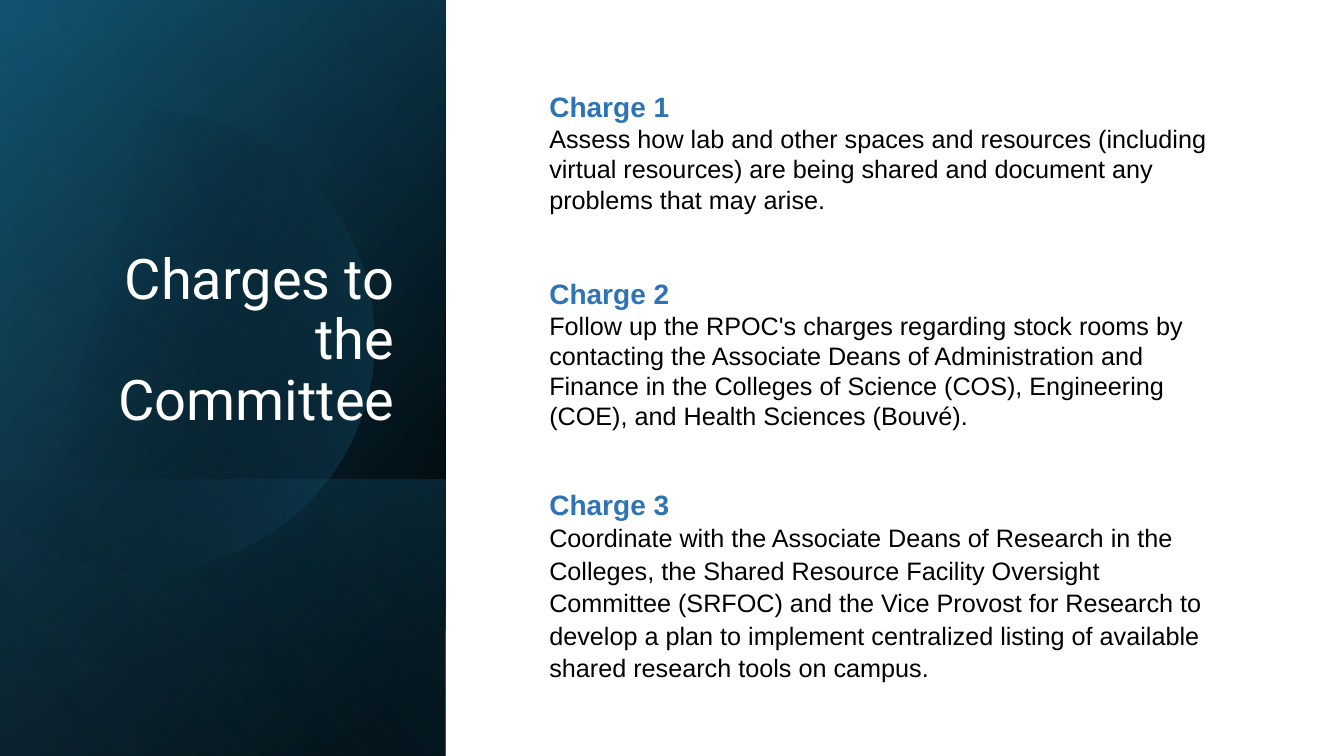
import math
from lxml import etree
from pptx import Presentation
from pptx.dml.color import RGBColor
from pptx.enum.shapes import MSO_SHAPE
from pptx.enum.text import MSO_ANCHOR, PP_ALIGN
from pptx.oxml.ns import qn
from pptx.util import Inches, Pt

RECTANGLE = MSO_SHAPE.RECTANGLE
BOTTOM = MSO_ANCHOR.BOTTOM
LEFT, RIGHT = PP_ALIGN.LEFT, PP_ALIGN.RIGHT

TITLE = "Charges to the Committee"
CHARGES = [
    ("Charge 1",
     "Assess how lab and other spaces and resources (including virtual resources) "
     "are being shared and document any problems that may arise.",
     0.82, 1.67, 1, 0),
    ("Charge 2",
     "Follow up the RPOC's charges regarding stock rooms by contacting the Associate "
     "Deans of Administration and Finance in the Colleges of Science (COS), "
     "Engineering (COE), and Health Sciences (Bouvé).",
     2.67, 1.67, 1, 0),
    ("Charge 3",
     "Coordinate with the Associate Deans of Research in the Colleges, the Shared "
     "Resource Facility Oversight Committee (SRFOC) and the Vice Provost for Research "
     "to develop a plan to implement centralized listing of available shared research "
     "tools on campus.",
     4.76, 2.07, 1.07, 8),
]

SLIDE_W, SLIDE_H = 13.33, 7.5
PANEL_W = 4.42
LOWER_TOP = 4.76
CHARGE_LEFT, CHARGE_W = 5.35, 6.74
DISC_X, DISC_Y, DISC_R = 1.43, 3.38, 2.28
ARC_STEPS = 90

BASE_BANDS = [
    (0, 50, [(8, "000000", 100), (100, "104862", 100)]),
    (0, 30, [(0, "000000", 0), (99, "156082", 46)]),
    (LOWER_TOP, 130, [(2, "156082", 29), (100, "000000", 30)]),
]
DISC_STOPS = [(29, "000000", 0), (100, "156082", 43)]
GLOSS_BAND = (0, 120, [(0, "000000", 0), (99, "46B1E1", 11)])

prs = Presentation()
prs.slide_width, prs.slide_height = Inches(SLIDE_W), Inches(SLIDE_H)
slide = prs.slides.add_slide(prs.slide_layouts[6])
shapes = slide.shapes


def color(value):
    return RGBColor.from_string(value)


def plain(shape):
    shape.shadow.inherit = False
    shape.line.fill.background()


def shade(shape, angle, stops):
    plain(shape)
    shape.fill.gradient()
    shape.fill.gradient_angle = 360 - angle
    for stop, (position, value, _) in zip(shape.fill.gradient_stops, stops):
        stop.position = position / 100
        stop.color.rgb = color(value)
    tints = shape.element.spPr.iter(qn("a:srgbClr"))
    for tint, (_, _, opacity) in zip(list(tints), stops):
        if opacity < 100:
            etree.SubElement(tint, qn("a:alpha")).set("val", str(opacity * 1000))


def add_band(top, angle, stops):
    length = SLIDE_H - top
    overhang = (length - PANEL_W) / 2
    band = shapes.add_shape(RECTANGLE, Inches(-overhang), Inches(top + overhang),
                            Inches(length), Inches(PANEL_W))
    band.rotation = 90
    band.element.spPr.find(qn("a:xfrm")).set("flipH", "1")
    shade(band, angle, stops)


def add_disc():
    half_arc = math.acos(-DISC_X / DISC_R)
    angles = [half_arc * (2 * i / ARC_STEPS - 1) for i in range(ARC_STEPS + 1)]
    points = [(Inches(DISC_X + DISC_R * math.cos(a)),
               Inches(DISC_Y + DISC_R * math.sin(a))) for a in angles]
    outline = shapes.build_freeform(*points[0])
    outline.add_line_segments(points[1:], close=True)
    shade(outline.convert_to_shape(), 14, DISC_STOPS)


def add_frame(left, top, width, height):
    box = shapes.add_textbox(Inches(left), Inches(top), Inches(width), Inches(height))
    box.text_frame.word_wrap = True
    return box.text_frame


def write(paragraph, text, font, size, value, bold=False, align=LEFT,
          spacing=1, before=0, after=0):
    paragraph.alignment = align
    paragraph.line_spacing = spacing
    paragraph.space_before, paragraph.space_after = Pt(before), Pt(after)
    run = paragraph.add_run()
    run.text = text
    run.font.name, run.font.size, run.font.bold = font, Pt(size), bold
    run.font.color.rgb = color(value)


page = shapes.add_shape(RECTANGLE, 0, 0, prs.slide_width, prs.slide_height)
plain(page)
page.fill.solid()
page.fill.fore_color.rgb = color("FFFFFF")

for base_band in BASE_BANDS:
    add_band(*base_band)
add_disc()
add_band(*GLOSS_BAND)

title_frame = add_frame(0.51, 0.64, 3.5, 3.7)
title_frame.vertical_anchor = BOTTOM
write(title_frame.paragraphs[0], TITLE, "Roboto", 40, "FFFFFF", align=RIGHT, spacing=0.9)

for heading, duty, top, height, spacing, after in CHARGES:
    charge_frame = add_frame(CHARGE_LEFT, top, CHARGE_W, height)
    write(charge_frame.paragraphs[0], heading, "Arial", 20, "2E74B5",
          bold=True, spacing=1.07, before=12)
    write(charge_frame.add_paragraph(), duty, "Arial", 18, "000000",
          spacing=spacing, after=after)

prs.save("out.pptx")
